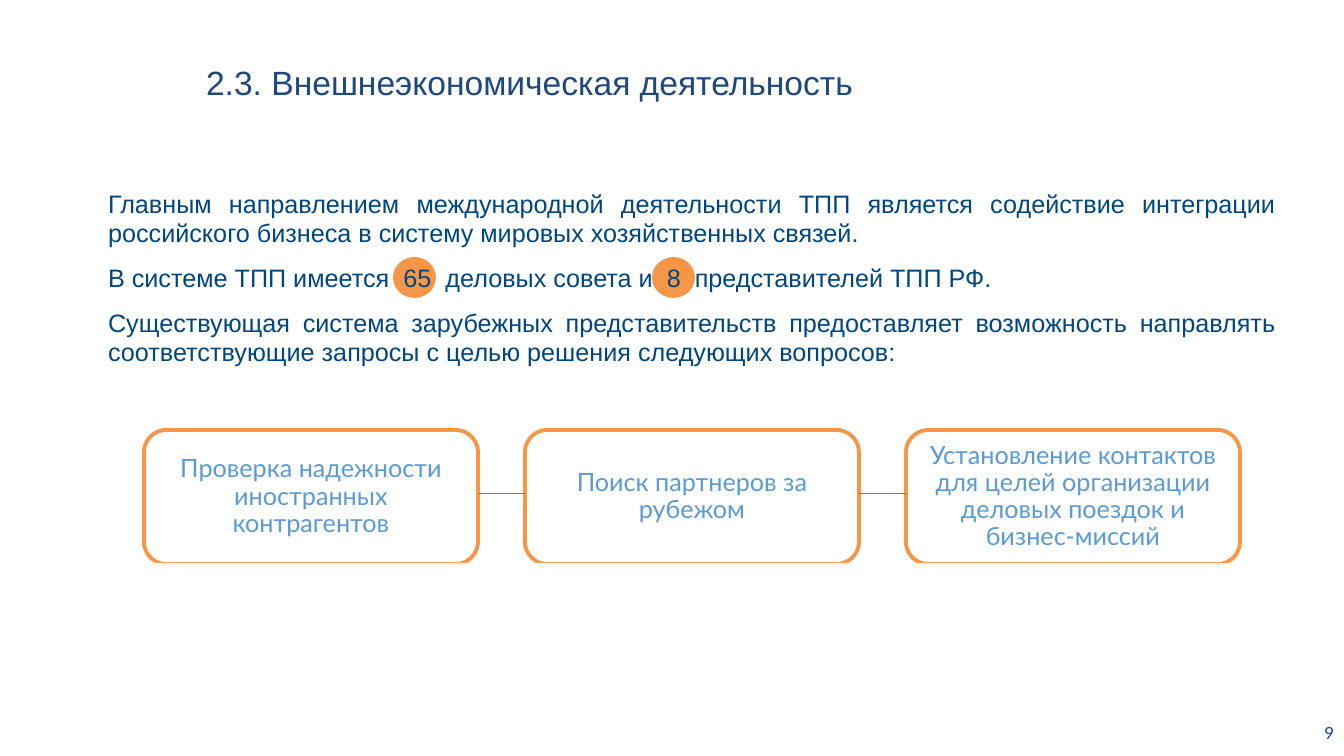
import pptx
import pptx.util
import pptx.dml.color
import pptx.enum.shapes
import pptx.enum.text
import pptx.oxml.ns
import lxml.etree

PX = 914400 / 100.8
COLORS = {
    "title": "1F497D",
    "body": "00477F",
    "orange": "F79646",
    "card_text": "5B9BD5",
    "link": "4F81BD",
    "white": "FFFFFF",
}
SHAPES = pptx.enum.shapes.MSO_SHAPE
ALIGN = pptx.enum.text.PP_ALIGN
ANCHOR = pptx.enum.text.MSO_ANCHOR
qn = pptx.oxml.ns.qn


def px(*lengths):
    return [pptx.util.Emu(round(length * PX)) for length in lengths]


def style(font, size, name, color):
    font.size = pptx.util.Pt(size)
    font.name = name
    font.color.rgb = pptx.dml.color.RGBColor.from_string(COLORS[color])


prs = pptx.Presentation()
prs.slide_width, prs.slide_height = px(1344, 756)
slide = prs.slides.add_slide(prs.slide_layouts[1])
title, body = slide.placeholders

for placeholder, box in ((title, (196, 62, 1102, 57)), (body, (98, 186, 1188, 591))):
    placeholder.left, placeholder.top, placeholder.width, placeholder.height = px(*box)
    placeholder.text_frame.auto_size = pptx.enum.text.MSO_AUTO_SIZE.NONE
    placeholder.text_frame.vertical_anchor = ANCHOR.TOP

title.text_frame.text = "2.3. Внешнеэкономическая деятельность"
heading = title.text_frame.paragraphs[0]
heading.alignment = ALIGN.LEFT
heading.line_spacing = 0.89
style(heading.runs[0].font, 24, "Arial", "title")

statements = [
    ["Главным направлением международной деятельности ТПП является содействие интеграции "
     "российского бизнеса в систему мировых хозяйственных связей."],
    ["В системе ТПП имеется", " ", "65", " ", "деловых совета и", " ", "8", " ",
     "представителей ТПП РФ."],
    ["Существующая система зарубежных представительств предоставляет возможность направлять "
     "соответствующие запросы с целью решения следующих вопросов:"],
]
for i, pieces in enumerate(statements):
    statement = body.text_frame.paragraphs[0] if i == 0 else body.text_frame.add_paragraph()
    properties = statement._p.get_or_add_pPr()
    properties.set("marL", "0")
    properties.set("indent", "0")
    lxml.etree.SubElement(properties, qn("a:buNone"))
    statement.alignment = ALIGN.JUSTIFY
    statement.line_spacing = 0.94
    statement.space_before = pptx.util.Pt(10 if i else 0)
    statement.space_after = pptx.util.Pt(2)
    for piece in pieces:
        run = statement.add_run()
        run.text = piece
        style(run.font, 18, "Arial", "body")
        if piece == " ":
            run._r.get_or_add_rPr().set("spc", "500")

for left in (652, 393):
    highlight = slide.shapes.add_shape(SHAPES.OVAL, *px(left, 257, 43, 41))
    highlight.shadow.inherit = False
    highlight.fill.solid()
    highlight.fill.fore_color.rgb = pptx.dml.color.RGBColor.from_string(COLORS["orange"])
    highlight.line.fill.background()
    title._element.addprevious(highlight._element)

services = [
    "Проверка надежности иностранных контрагентов",
    "Поиск партнеров за рубежом",
    "Установление контактов для целей организации деловых поездок и бизнес-миссий",
]
CARD_LEFT, CARD_TOP, CARD_WIDTH, CARD_HEIGHT, CARD_STEP = 144, 430, 334, 134, 381
for i, service in enumerate(services):
    left = CARD_LEFT + i * CARD_STEP
    card = slide.shapes.add_shape(
        SHAPES.ROUNDED_RECTANGLE, *px(left, CARD_TOP, CARD_WIDTH, CARD_HEIGHT))
    veil = slide.shapes.add_shape(SHAPES.RECTANGLE, *px(left, 563, CARD_WIDTH, 87))
    for shape in (card, veil):
        shape.shadow.inherit = False
        shape.fill.solid()
        shape.fill.fore_color.rgb = pptx.dml.color.RGBColor.from_string(COLORS["white"])
    card.line.color.rgb = pptx.dml.color.RGBColor.from_string(COLORS["orange"])
    card.line.width = pptx.util.Pt(2.75)
    veil.line.fill.background()
    veil_color = veil._element.spPr.find(qn("a:solidFill"))[0]
    lxml.etree.SubElement(veil_color, qn("a:alpha"), val="90000")

    frame = card.text_frame
    frame.word_wrap = True
    frame.vertical_anchor = ANCHOR.MIDDLE
    frame.margin_left, frame.margin_right, frame.margin_top, frame.margin_bottom = px(14, 14, 8, 8)
    frame.text = service
    frame.paragraphs[0].alignment = ALIGN.CENTER
    frame.paragraphs[0].line_spacing = 0.9
    style(frame.paragraphs[0].runs[0].font, 18, "Lato", "card_text")

for i in range(len(services) - 1):
    start = CARD_LEFT + CARD_WIDTH + i * CARD_STEP
    end = CARD_LEFT + (i + 1) * CARD_STEP
    link = slide.shapes.add_connector(
        pptx.enum.shapes.MSO_CONNECTOR.STRAIGHT, *px(start, 493, end, 493))
    link.line.color.rgb = pptx.dml.color.RGBColor.from_string(COLORS["link"])
    link.line.width = pptx.util.Pt(0.5)
    lxml.etree.SubElement(link._element.spPr, qn("a:effectLst"))

page_number = slide.shapes.add_textbox(*px(1168, 711, 176, 44)).text_frame
page_number.word_wrap = True
page_number.vertical_anchor = ANCHOR.MIDDLE
page_number.text = "9"
page_number.paragraphs[0].alignment = ALIGN.RIGHT
style(page_number.paragraphs[0].runs[0].font, 12, "Lato", "title")

prs.save("out.pptx")
